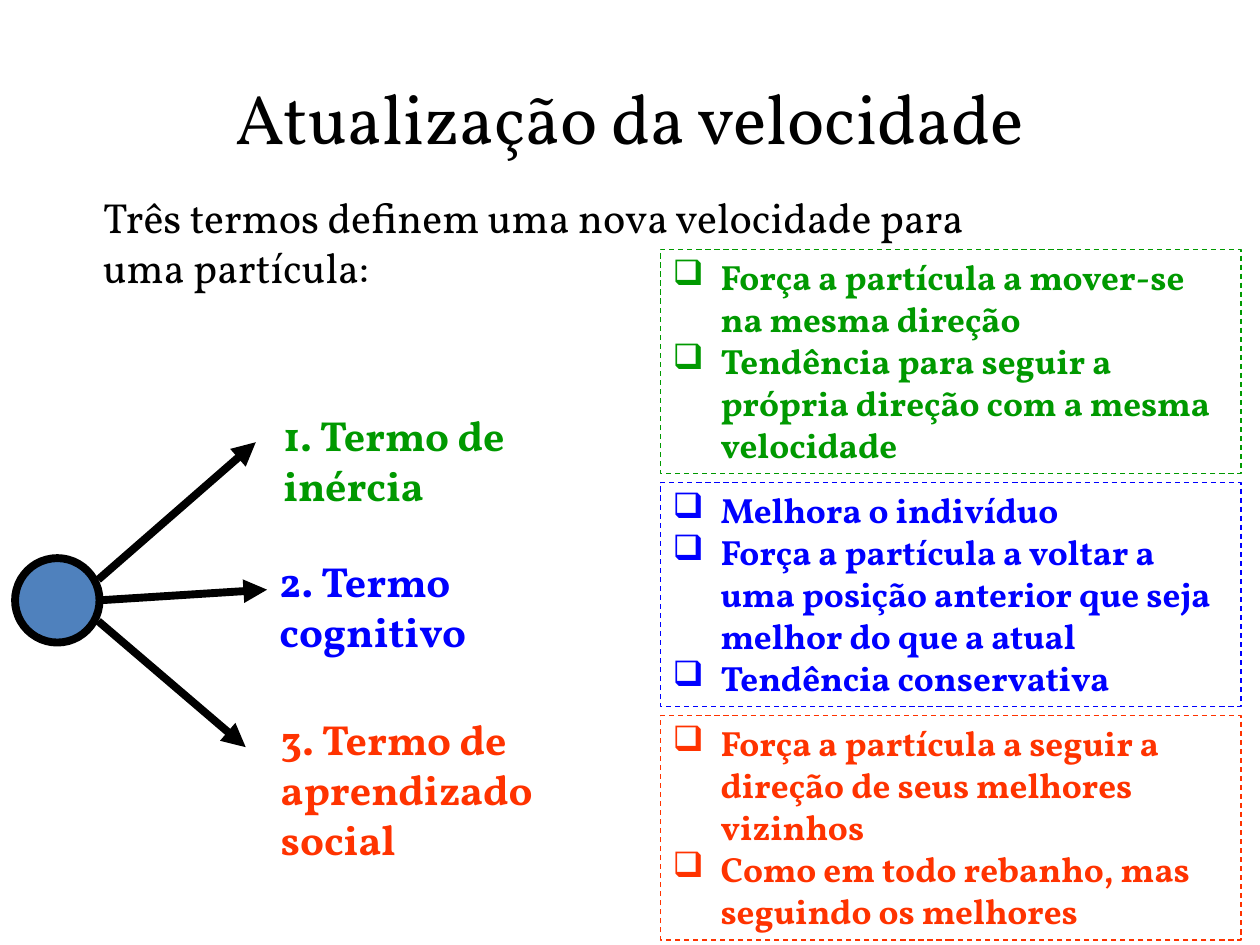
from dataclasses import dataclass

from lxml.etree import SubElement
from pptx import Presentation
from pptx.dml.color import RGBColor
from pptx.enum.dml import MSO_LINE
from pptx.enum.shapes import MSO_CONNECTOR, MSO_SHAPE
from pptx.enum.text import MSO_ANCHOR, MSO_AUTO_SIZE, PP_ALIGN
from pptx.oxml.ns import qn
from pptx.util import Inches, Pt

CELL = 0.1  # inches; the slide is a grid of 100 columns by 75 rows
COLUMNS, ROWS = 100, 75


@dataclass(frozen=True)
class Theme:
    font: str = "Vollkorn"
    ink: str = "000000"
    particle: str = "4F81BD"
    inertia: str = "009900"
    cognitive: str = "0000FF"
    social: str = "FF3300"
    title_size: int = 40
    body_size: int = 24
    panel_size: int = 20
    arrow_width: float = 4.5
    panel_border: float = 0.75
    indent: float = 3.8
    bullet: str = "❑"


THEME = Theme()


@dataclass(frozen=True)
class Box:
    """An area of the slide, measured in grid columns and rows."""
    left: float
    top: float
    width: float
    height: float

    def inner(self, left, top, width, height):
        return Box(self.left + left, self.top + top, width, height)

    def point(self, column, row):
        return cells(self.left + column), cells(self.top + row)

    def emu(self):
        return [cells(n) for n in (self.left, self.top, self.width, self.height)]


def cells(count):
    return Inches(count * CELL)


def rgb(color):
    return RGBColor.from_string(color)


def write(shape, paragraphs, size=THEME.body_size, color=THEME.ink, bold=False,
          align=PP_ALIGN.LEFT, anchor=MSO_ANCHOR.TOP, indent=0, bullet=None,
          fit=MSO_AUTO_SIZE.NONE):
    frame = shape.text_frame
    frame.word_wrap = True
    frame.auto_size = fit
    frame.vertical_anchor = anchor
    for index, text in enumerate(paragraphs):
        paragraph = frame.add_paragraph() if index else frame.paragraphs[0]
        paragraph.alignment = align
        run = paragraph.add_run()
        run.text = text
        run.font.name = THEME.font
        run.font.size = Pt(size)
        run.font.bold = bold
        run.font.color.rgb = rgb(color)
        properties = paragraph._p.get_or_add_pPr()
        if indent:
            properties.set("marL", str(cells(indent)))
        if bullet:
            properties.set("indent", str(-cells(indent)))
            SubElement(properties, qn("a:buChar")).set("char", bullet)


def add_outlined(slide, preset, box, color, width):
    shape = slide.shapes.add_shape(preset, *box.emu())
    shape.shadow.inherit = False
    shape.fill.background()
    shape.line.color.rgb = rgb(color)
    shape.line.width = Pt(width)
    return shape


def add_arrow(slide, start, end):
    arrow = slide.shapes.add_connector(MSO_CONNECTOR.STRAIGHT, *start, *end)
    arrow.line.color.rgb = rgb(THEME.ink)
    arrow.line.width = Pt(THEME.arrow_width)
    SubElement(arrow.line._get_or_add_ln(), qn("a:tailEnd")).set("type", "triangle")
    SubElement(arrow._element.spPr, qn("a:effectLst"))


def add_title(slide, box, text):
    title = slide.shapes.title
    title.left, title.top, title.width, title.height = box.emu()
    write(title, [text], size=THEME.title_size, align=PP_ALIGN.CENTER,
          anchor=MSO_ANCHOR.MIDDLE)


def add_intro(slide, box, text):
    write(slide.shapes.add_textbox(*box.emu()), [text], indent=THEME.indent)


def add_particle_diagram(slide, box, terms):
    """A particle with one arrow leading to each velocity term."""
    particle = add_outlined(slide, MSO_SHAPE.OVAL, box.inner(0, 12.3, 6.7, 6.7),
                            THEME.ink, THEME.arrow_width)
    particle.fill.solid()
    particle.fill.fore_color.rgb = rgb(THEME.particle)
    for index, (lines, color, tip, corner, height) in enumerate(terms):
        start = box.point(6.6, 14 + 1.65 * index)
        add_arrow(slide, start, box.point(*tip))
        label = slide.shapes.add_textbox(*box.inner(*corner, 29, height).emu())
        write(label, lines, color=color, bold=True, fit=MSO_AUTO_SIZE.SHAPE_TO_FIT_TEXT)


def add_panels(slide, box, panels):
    """Equal dashed panels stacked from the top to the bottom of the box."""
    gap = 0.7
    height = (box.height - gap * (len(panels) - 1)) / len(panels)
    for index, (color, effects) in enumerate(panels):
        area = box.inner(0, index * (height + gap), box.width, height)
        panel = add_outlined(slide, MSO_SHAPE.RECTANGLE, area, color, THEME.panel_border)
        panel.line.dash_style = MSO_LINE.DASH
        write(panel, effects, size=THEME.panel_size, color=color, bold=True,
              indent=THEME.indent, bullet=THEME.bullet,
              fit=MSO_AUTO_SIZE.SHAPE_TO_FIT_TEXT)


# Lines, colour, arrow tip, label corner and label height of each term
TERMS = [
    (["1. Termo de inércia"], THEME.inertia, (19.1, 3.1), (20.3, 0), 5),
    (["2. Termo cognitivo"], THEME.cognitive, (20, 14.8), (20, 11.6), 5),
    (["3. Termo de", "aprendizado social"], THEME.social, (18.3, 27.3), (20.1, 24.1), 9),
]
PANELS = [
    (THEME.inertia, [
        "Força a partícula a mover-se na mesma direção",
        "Tendência para seguir a própria direção com a mesma velocidade",
    ]),
    (THEME.cognitive, [
        "Melhora o indivíduo",
        "Força a partícula a voltar a uma posição anterior que seja melhor do que a atual",
        "Tendência conservativa",
    ]),
    (THEME.social, [
        "Força a partícula a seguir a direção de seus melhores vizinhos",
        "Como em todo rebanho, mas seguindo os melhores",
    ]),
]


def main():
    deck = Presentation()
    deck.slide_width, deck.slide_height = cells(COLUMNS), cells(ROWS)
    slide = deck.slides.add_slide(deck.slide_layouts[5])
    add_title(slide, Box(5, 3, 90, 12.5), "Atualização da velocidade")
    add_intro(slide, Box(3.4, 14.7, 80, 49.5),
              "Três termos definem uma nova velocidade para uma partícula:")
    add_particle_diagram(slide, Box(1.2, 32, 50, 33), TERMS)
    add_panels(slide, Box(52.4, 19.8, 46.1, 54.8), PANELS)
    deck.save("out.pptx")


if __name__ == "__main__":
    main()
